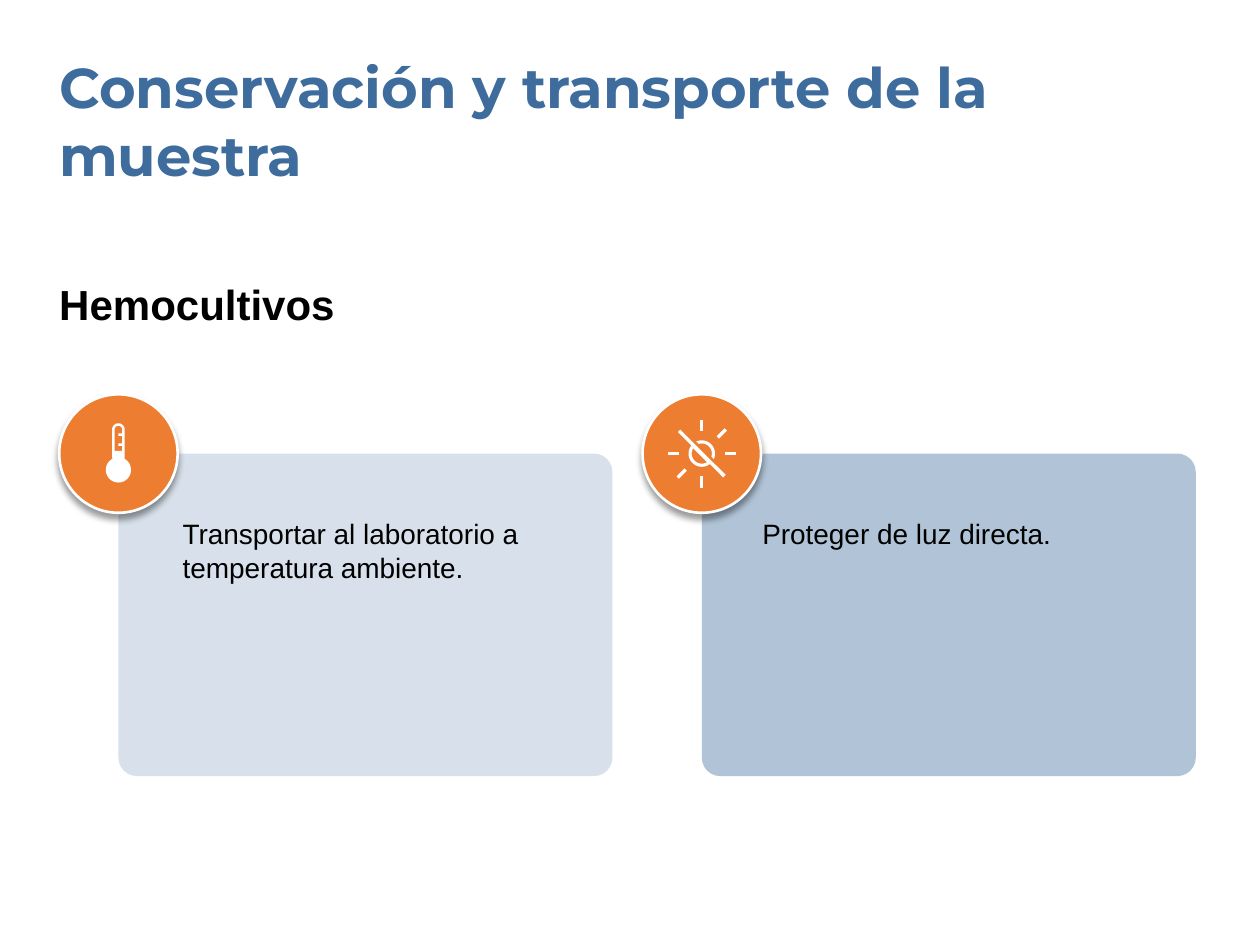
from dataclasses import dataclass
from math import cos, radians, sin
from typing import Callable

from lxml.etree import SubElement
from pptx import Presentation
from pptx.dml.color import RGBColor
from pptx.enum.shapes import MSO_SHAPE
from pptx.enum.text import MSO_ANCHOR, MSO_AUTO_SIZE, PP_ALIGN
from pptx.oxml.ns import qn
from pptx.shapes.autoshape import Shape
from pptx.slide import Slide
from pptx.util import Inches, Pt

Point = tuple[float, float]


@dataclass(frozen=True)
class Theme:
    blue: str = "3D6C9D"
    orange: str = "ED7D31"
    white: str = "FFFFFF"
    black: str = "000000"
    title_font: str = "Montserrat"
    body_font: str = "Arial"
    title_size: int = 32
    heading_size: int = 24
    body_size: int = 16


@dataclass(frozen=True)
class Card:
    left: float
    text: str
    text_left: float
    text_width: float
    text_height: float
    opacity: int
    draw_icon: Callable[[Slide, float, float], None]


THEME = Theme()
BADGE_TOP = 3.13
BADGE_SIZE = 0.94


def place(shape: Shape, left: float, top: float, width: float, height: float) -> None:
    shape.left, shape.top = Inches(left), Inches(top)
    shape.width, shape.height = Inches(width), Inches(height)


def write(shape: Shape, text: str, font: str, size: int, color: str, bold: bool) -> None:
    frame = shape.text_frame
    frame.text = text
    frame.word_wrap = True
    frame.auto_size = MSO_AUTO_SIZE.NONE
    frame.vertical_anchor = MSO_ANCHOR.TOP
    frame.margin_left = frame.margin_right = frame.margin_top = frame.margin_bottom = 0
    paragraph = frame.paragraphs[0]
    paragraph.alignment = PP_ALIGN.LEFT
    paragraph.font.name = font
    paragraph.font.size = Pt(size)
    paragraph.font.bold = bold
    paragraph.font.color.rgb = RGBColor.from_string(color)


def add_text(slide: Slide, text: str, left: float, top: float, width: float,
             height: float, size: int, bold: bool = False) -> None:
    box = slide.shapes.add_textbox(0, 0, 0, 0)
    place(box, left, top, width, height)
    write(box, text, THEME.body_font, size, THEME.black, bold)


def paint(shape: Shape, color: str) -> None:
    shape.shadow.inherit = False
    shape.fill.solid()
    shape.fill.fore_color.rgb = RGBColor.from_string(color)
    shape.line.fill.background()


def arc(center: Point, radius: float, start: int, end: int) -> list[Point]:
    steps = max(abs(end - start) // 6, 1)
    angles = [radians(start + (end - start) * step / steps) for step in range(steps + 1)]
    return [(center[0] + radius * cos(angle), center[1] + radius * sin(angle))
            for angle in angles]


def add_outline(slide: Slide, center: Point, *contours: list[Point]) -> None:
    placed = [[(Inches(center[0] + x), Inches(center[1] + y)) for x, y in contour]
              for contour in contours]
    builder = slide.shapes.build_freeform(*placed[0][0])
    for index, contour in enumerate(placed):
        if index:
            builder.move_to(*contour[0])
        builder.add_line_segments(contour[1:], close=True)
    paint(builder.convert_to_shape(), THEME.white)


def draw_thermometer(slide: Slide, x: float, y: float) -> None:
    tube_top = (0, -0.19)
    outline = arc(tube_top, 0.05, 180, 360) + arc((0, 0.13), 0.1, -61, 241)
    window = arc(tube_top, 0.03, 180, 360)
    for mark_top in (-0.16, -0.08):
        window += [(0.03, mark_top), (0, mark_top),
                   (0, mark_top + 0.02), (0.03, mark_top + 0.02)]
    window += [(0.03, -0.02), (-0.03, -0.02)]
    add_outline(slide, (x, y), outline, window)


def draw_shaded_sun(slide: Slide, x: float, y: float) -> None:
    center, origin = (x, y), (0, 0)
    inner, outer = 0.08, 0.105
    near, far, half = 0.18, 0.27, 0.013
    ray = [(near, -half), (far, -half), (far, half), (near, half)]
    for angle in (0, 90, 135, 180, 270, 315):
        turn = radians(angle)
        add_outline(slide, center, [
            (px * cos(turn) - py * sin(turn), px * sin(turn) + py * cos(turn))
            for px, py in ray])
    add_outline(slide, center, arc(origin, outer, -115, 25) + arc(origin, inner, 17, -107))
    slash = [(0.19, 0.17), (-0.17, -0.19), (-0.19, -0.17)]
    add_outline(slide, center,
                slash + arc(origin, outer, 218, 52) + [(0.17, 0.19)],
                arc(origin, inner, 211, 59))


def add_card(slide: Slide, card: Card) -> None:
    radius = BADGE_SIZE / 2
    center_x, center_y = card.left + radius, BADGE_TOP + radius
    panel = slide.shapes.add_shape(MSO_SHAPE.ROUNDED_RECTANGLE, 0, 0, 0, 0)
    place(panel, center_x, center_y, 3.92, 2.56)
    panel.adjustments[0] = 0.057
    paint(panel, THEME.blue)
    color = panel.fill._xPr.find(qn("a:solidFill"))[0]
    SubElement(color, qn("a:alpha"), val=str(card.opacity * 1000))

    badge = slide.shapes.add_shape(MSO_SHAPE.OVAL, 0, 0, 0, 0)
    place(badge, card.left, BADGE_TOP, BADGE_SIZE, BADGE_SIZE)
    paint(badge, THEME.orange)
    badge.line.color.rgb = RGBColor.from_string(THEME.white)
    badge.line.width = Pt(1.5)
    effects = badge._element.spPr.find(qn("a:effectLst"))
    shadow = SubElement(effects, qn("a:outerShdw"), blurRad=str(Pt(4)), dist=str(Pt(3)),
                        dir="5400000", rotWithShape="0")
    shadow_color = SubElement(shadow, qn("a:srgbClr"), val=THEME.black)
    SubElement(shadow_color, qn("a:alpha"), val="40000")

    add_text(slide, card.text, card.text_left, 4.1, card.text_width, card.text_height,
             THEME.body_size)
    card.draw_icon(slide, center_x, center_y)


def main() -> None:
    presentation = Presentation()
    presentation.slide_width, presentation.slide_height = Inches(10), Inches(7.5)
    slide = presentation.slides.add_slide(presentation.slide_layouts[5])
    title = slide.shapes.title
    place(title, 0.47, 0.42, 8.55, 1.08)
    write(title, "Conservación y transporte de la muestra", THEME.title_font,
          THEME.title_size, THEME.blue, True)
    add_text(slide, "Hemocultivos", 0.47, 2.21, 7.85, 0.4, THEME.heading_size, True)
    cards = (
        Card(0.47, "Transportar al laboratorio a temperatura ambiente.",
             1.45, 2.9, 0.54, 20, draw_thermometer),
        Card(5.1, "Proteger de luz directa.", 6.05, 3.15, 0.27, 40, draw_shaded_sun),
    )
    for card in cards:
        add_card(slide, card)
    presentation.save("out.pptx")


if __name__ == "__main__":
    main()
